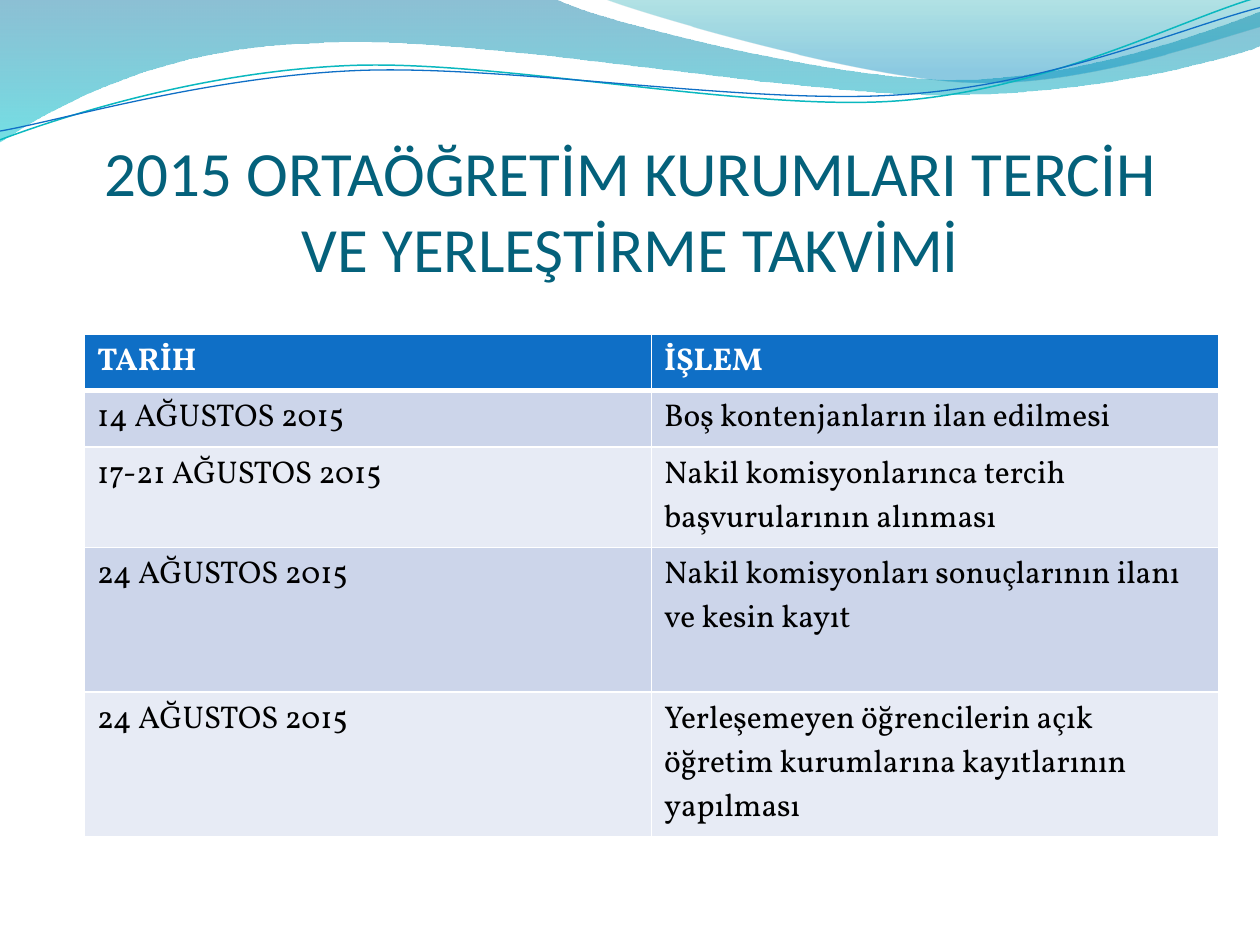
"""Build the 2015 school placement calendar slide with its wave header."""
from math import cos, radians, sin

from lxml import etree
from pptx import Presentation
from pptx.dml.color import RGBColor
from pptx.enum.text import MSO_ANCHOR, PP_ALIGN
from pptx.oxml.ns import qn
from pptx.util import Inches, Pt

CENTER = PP_ALIGN.CENTER
BOTTOM = MSO_ANCHOR.BOTTOM
WHITE = RGBColor(0xFF, 0xFF, 0xFF)
BLACK = RGBColor(0x00, 0x00, 0x00)
TITLE_TEAL = RGBColor(0x04, 0x61, 0x7B)
HEADER_BLUE = RGBColor(0x0F, 0x6F, 0xC6)
LINE_TEAL = RGBColor(0x0A, 0xB8, 0xBF)
ROW_FILLS = [RGBColor(0xE7, 0xEB, 0xF5), RGBColor(0xCC, 0xD5, 0xEA)]
DEEP_BLUE = RGBColor(0x00, 0x74, 0xA1)
AQUA = RGBColor(0x00, 0xC6, 0xCF)
SEA_GREEN = RGBColor(0x00, 0xA1, 0xA9)
SKY_BLUE = RGBColor(0x00, 0x8B, 0xBF)
TILT = 2.7
TILT_CENTER = (4.99, 0.58)


def add_wave(shapes, start, segments, tilt=0):
    """Draw lines (x, y) and cubic curves (x1, y1, x2, y2, x, y)."""
    numbers = list(start) + [number for segment in segments for number in segment]
    turn_x, turn_y = TILT_CENTER
    cosine, sine = cos(radians(tilt)), sin(radians(tilt))
    points = [(Inches(turn_x + (x - turn_x) * cosine - (y - turn_y) * sine),
               Inches(turn_y + (x - turn_x) * sine + (y - turn_y) * cosine))
              for x, y in zip(numbers[::2], numbers[1::2])]
    builder = shapes.build_freeform(*points[0])
    builder.add_line_segments(points[1:], close=not tilt)
    wave = builder.convert_to_shape()
    wave.rotation = -tilt
    wave.shadow.inherit = False
    outline = wave.element.spPr.find(".//" + qn("a:path"))
    steps = iter(outline.findall(qn("a:lnTo")))
    for segment in segments:
        parts = [next(steps) for _ in range(len(segment) // 2)]
        if len(parts) == 3:
            curve = etree.Element(qn("a:cubicBezTo"))
            parts[0].addprevious(curve)
            for part in parts:
                curve.append(part[0])
                outline.remove(part)
    return wave


def add_text(paragraph, text, font_name, size, color, bold=False):
    """Append one formatted run."""
    run = paragraph.add_run()
    run.text = text
    run.font.name = font_name
    run.font.size = Pt(size)
    run.font.bold = bold
    run.font.color.rgb = color


prs = Presentation()
prs.slide_width, prs.slide_height = Inches(10), Inches(7.5)
slide = prs.slides.add_slide(prs.slide_layouts[5])
shapes = slide.shapes

bands = [
    ((0, 0),
     [(4.4, -0.01), (4.76, 0.17, 6.64, 0.63, 7.58, 0.63),
      (8.53, 0.63, 9.58, 0.26, 10, 0.09), (10.01, 0.36),
      (9.83, 0.44, 8.7, 0.76, 7.46, 0.75), (6.22, 0.75, 3.82, 0.28, 2.57, 0.34),
      (1.29, 0.36, 0.46, 0.83, -0.01, 1.13), (0, 0)],
     [(0, DEEP_BLUE, 45), (1, AQUA, 55)]),
    ((4.79, -0.01),
     [(5.09, 0.11, 6.82, 0.62, 7.69, 0.65), (8.56, 0.69, 9.61, 0.32, 10, 0.21),
      (10, 0), (4.79, -0.01)],
     [(0, SEA_GREEN, 30), (0.8, SKY_BLUE, 45)]),
]
for start, segments, gradient in bands:
    wave = add_wave(shapes, start, segments)
    wave.line.fill.background()
    wave.fill.gradient()
    wave.fill.gradient_angle = 270
    stop_elements = wave.element.spPr.findall(".//" + qn("a:gs"))
    for stop, element, (position, color, opacity) in zip(
            wave.fill.gradient_stops, stop_elements, gradient):
        stop.position = position
        stop.color.rgb = color
        alpha = etree.SubElement(element.find(qn("a:srgbClr")), qn("a:alpha"))
        alpha.set("val", str(opacity * 1000))

strands = [
    ((0, 1.11),
     [(0.48, 0.93, 1.58, 0.57, 2.77, 0.52), (3.95, 0.47, 5.93, 0.89, 7.13, 0.8),
      (8.33, 0.71, 9.38, 0.15, 9.98, -0.02)], LINE_TEAL, 0.85),
    ((0, 1.04),
     [(0.47, 0.96, 1.64, 0.61, 2.83, 0.56), (4.03, 0.51, 5.97, 0.84, 7.17, 0.75),
      (8.36, 0.67, 9.41, 0.21, 10, 0.06)], HEADER_BLUE, 0.75),
]
strand_group = shapes.add_group_shape()
for start, segments, color, width in strands:
    wave = add_wave(strand_group.shapes, start, segments, TILT)
    wave.fill.background()
    wave.line.color.rgb = color
    wave.line.width = Pt(width)

title = shapes.title
strand_group.element.addnext(title.element)
title.left, title.top, title.width, title.height = (
    Inches(0.59), Inches(0.76), Inches(8.83), Inches(1.5))
title_frame = title.text_frame
title_frame.word_wrap = True
title_frame.vertical_anchor = BOTTOM
title_frame.margin_left = title_frame.margin_right = title_frame.margin_bottom = 0
title_frame.margin_top = Inches(0.05)
title_frame.paragraphs[0].alignment = CENTER
add_text(title_frame.paragraphs[0],
         "2015 ORTAÖĞRETİM KURUMLARI TERCİH VE YERLEŞTİRME TAKVİMİ",
         "Calibri", 36, TITLE_TEAL)

schedule = [
    ("TARİH", "İŞLEM"),
    ("14 AĞUSTOS 2015", "Boş kontenjanların ilan edilmesi"),
    ("17-21 AĞUSTOS 2015", "Nakil komisyonlarınca tercih başvurularının alınması"),
    ("24 AĞUSTOS 2015", "Nakil komisyonları sonuçlarının ilanı ve kesin kayıt"),
    ("24 AĞUSTOS 2015",
     "Yerleşemeyen öğrencilerin açık öğretim kurumlarına kayıtlarının yapılması"),
]
calendar_frame = shapes.add_table(len(schedule), 2, Inches(0.67), Inches(2.65),
                                  Inches(9), Inches(3.21))
calendar = calendar_frame.table
for row_index, entry in enumerate(schedule):
    calendar.rows[row_index].height = Inches(0.41)
    is_header = row_index == 0
    for column_index, text in enumerate(entry):
        cell = calendar.cell(row_index, column_index)
        cell.fill.solid()
        cell.fill.fore_color.rgb = HEADER_BLUE if is_header else ROW_FILLS[row_index % 2]
        add_text(cell.text_frame.paragraphs[0], text, "Vollkorn", 18,
                 WHITE if is_header else BLACK, is_header)
        cell_properties = cell.fill.fore_color and cell._tc.get_or_add_tcPr()
        top_width = 3 if row_index == 1 else 1
        bottom_width = 3 if is_header else 1
        edges = [("a:lnL", 1), ("a:lnR", 1), ("a:lnT", top_width), ("a:lnB", bottom_width)]
        for order, (edge, width) in enumerate(edges):
            border = etree.Element(qn(edge), w=str(Pt(width)))
            border_fill = etree.SubElement(border, qn("a:solidFill"))
            etree.SubElement(border_fill, qn("a:srgbClr"), val=str(WHITE))
            cell_properties.insert(order, border)
calendar.cell(3, 1).margin_bottom = Inches(0.4)
calendar_frame.height = Inches(3.21)

prs.save("out.pptx")
